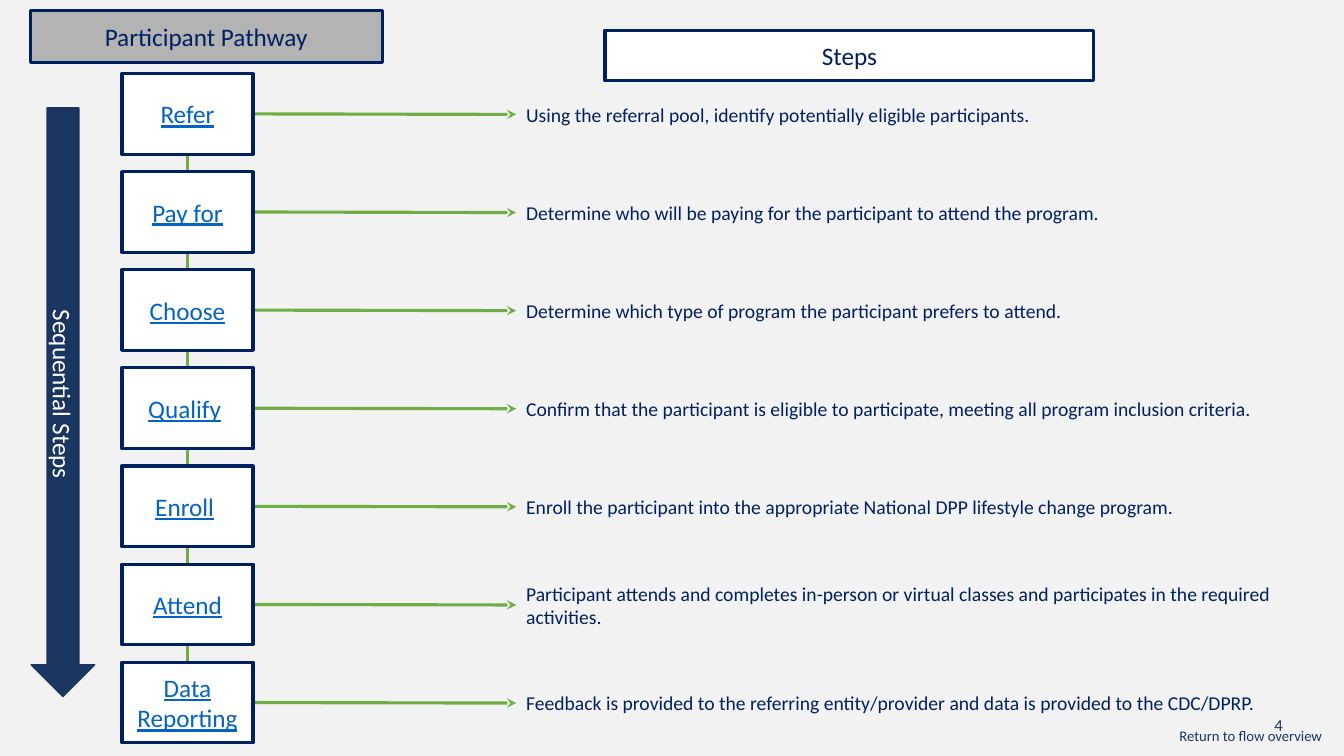
import pptx
import pptx.util
import pptx.dml.color
import pptx.enum.shapes
import pptx.enum.text
import pptx.oxml
import pptx.oxml.ns

# Content
STEPS = [
    ("Refer", "Using the referral pool, identify potentially eligible participants."),
    ("Pay for", "Determine who will be paying for the participant to attend the program."),
    ("Choose", "Determine which type of program the participant prefers to attend."),
    ("Qualify ", "Confirm that the participant is eligible to participate, "
                 "meeting all program inclusion criteria."),
    ("Enroll ", "Enroll the participant into the appropriate National DPP lifestyle change program."),
    ("Attend", "Participant attends and completes in-person or virtual classes "
               "and participates in the required activities."),
    ("Data Reporting", "Feedback is provided to the referring entity/provider "
                       "and data is provided to the CDC/DPRP."),
]
HEADINGS = [
    ("Participant Pathway", (30, 10, 349, 52), "gray"),
    ("Steps", (600, 30, 485, 50), "white"),
]
ARROW_LABEL = "Sequential Steps"
PAGE_NUMBER = "4"
RETURN_LABEL = "Return to flow overview"

COLORS = {
    "background": "F2F2F2", "white": "FFFFFF", "gray": "B3B3B3", "navy": "002060",
    "arrow": "193560", "number": "203864", "link": "0563C1", "green": "70AD47",
}
FONT = "Calibri"

# Layout in px, 100 to the inch
EMU_PER_PX = 9144
SLIDE_SIZE = (1333, 750)
BOX_LEFT, BOX_WIDTH, BOX_HEIGHT = 121, 130, 80
FIRST_TOP, LAST_TOP = 73, 657
TEXT_LEFT, TEXT_WIDTH, TEXT_HEIGHT = 512, 790, 69
TEXT_DROP = 6

SHAPES = pptx.enum.shapes.MSO_SHAPE
ALIGN = pptx.enum.text.PP_ALIGN
ANCHOR = pptx.enum.text.MSO_ANCHOR


def emu(*lengths):
    return [round(length * EMU_PER_PX) for length in lengths]


def color(name):
    return pptx.dml.color.RGBColor.from_string(COLORS[name])


def write_text(shape, text, size=18, ink="navy", align=ALIGN.CENTER,
               anchor=ANCHOR.MIDDLE, underline=False, wrap=True):
    frame = shape.text_frame
    frame.word_wrap = wrap
    frame.vertical_anchor = anchor
    paragraph = frame.paragraphs[0]
    paragraph.alignment = align
    # A trailing space is kept but never underlined
    words = text.rstrip()
    for part, underlined in ((words, underline), (text[len(words):], False)):
        if part:
            run = paragraph.add_run()
            run.text = part
            run.font.name = FONT
            run.font.size = pptx.util.Pt(size)
            run.font.color.rgb = color(ink)
            run.font.underline = underlined


def add_block(slide, kind, bounds, fill, line="navy", weight=2.25):
    shape = slide.shapes.add_shape(kind, *emu(*bounds))
    shape.shadow.inherit = False
    shape.fill.solid()
    shape.fill.fore_color.rgb = color(fill)
    shape.line.color.rgb = color(line)
    shape.line.width = pptx.util.Pt(weight)
    return shape


def add_line(slide, start, end, arrowhead=False):
    connector = slide.shapes.add_connector(
        pptx.enum.shapes.MSO_CONNECTOR.STRAIGHT, *emu(*start, *end))
    connector.line.color.rgb = color("green")
    connector.line.width = pptx.util.Pt(2.25)
    if arrowhead:
        tail = pptx.oxml.parse_xml(
            f'<a:tailEnd {pptx.oxml.ns.nsdecls("a")} type="stealth"/>')
        connector.line._get_or_add_ln().append(tail)
    connector._element.spPr.append(
        pptx.oxml.parse_xml(f'<a:effectLst {pptx.oxml.ns.nsdecls("a")}/>'))
    return connector


def add_note(slide, bounds, text, size, ink):
    note = slide.shapes.add_textbox(*emu(*bounds))
    write_text(note, text, size=size, ink=ink, align=ALIGN.LEFT, anchor=ANCHOR.TOP, wrap=False)
    note.text_frame.auto_size = pptx.enum.text.MSO_AUTO_SIZE.SHAPE_TO_FIT_TEXT


def add_steps(slide):
    pitch = (LAST_TOP - FIRST_TOP) / (len(STEPS) - 1)
    tops = [FIRST_TOP + index * pitch for index in range(len(STEPS))]

    # Lines lie behind the boxes
    middle = BOX_LEFT + BOX_WIDTH / 2
    spine = add_line(slide, (middle, FIRST_TOP + BOX_HEIGHT), (middle, LAST_TOP))
    arrows = [add_line(slide, (BOX_LEFT + BOX_WIDTH, top + BOX_HEIGHT / 2),
                       (TEXT_LEFT, top + BOX_HEIGHT / 2), arrowhead=True)
              for top in tops]

    # Step boxes and their descriptions
    boxes = []
    for (label, description), top, arrow in zip(STEPS, tops, arrows):
        box = add_block(slide, SHAPES.RECTANGLE, (BOX_LEFT, top, BOX_WIDTH, BOX_HEIGHT), "white")
        write_text(box, label, ink="link", underline=True)
        boxes.append(box)
        detail = slide.shapes.add_textbox(
            *emu(TEXT_LEFT, top + TEXT_DROP, TEXT_WIDTH, TEXT_HEIGHT))
        write_text(detail, description, size=14, align=ALIGN.LEFT)
        arrow.begin_connect(box, 3)
        arrow.end_connect(detail, 1)
    spine.begin_connect(boxes[0], 2)
    spine.end_connect(boxes[-1], 0)


def main():
    presentation = pptx.Presentation()
    presentation.slide_width, presentation.slide_height = emu(*SLIDE_SIZE)
    slide = presentation.slides.add_slide(presentation.slide_layouts[6])
    slide.background.fill.solid()
    slide.background.fill.fore_color.rgb = color("background")

    add_note(slide, (1254, 704, 40, 30), PAGE_NUMBER, 12, "number")
    add_steps(slide)

    # Sequence arrow with vertical text
    sequence = add_block(slide, SHAPES.DOWN_ARROW, (31, 107, 63, 584), "arrow", "arrow", 1)
    write_text(sequence, ARROW_LABEL, ink="white")
    sequence.text_frame._txBody.bodyPr.set("vert", "vert")

    # Headings and footer
    for text, bounds, fill in HEADINGS:
        write_text(add_block(slide, SHAPES.RECTANGLE, bounds, fill), text)
    add_note(slide, (1160, 716, 164, 28), RETURN_LABEL, 10.5, "arrow")

    presentation.save("out.pptx")


if __name__ == "__main__":
    main()
